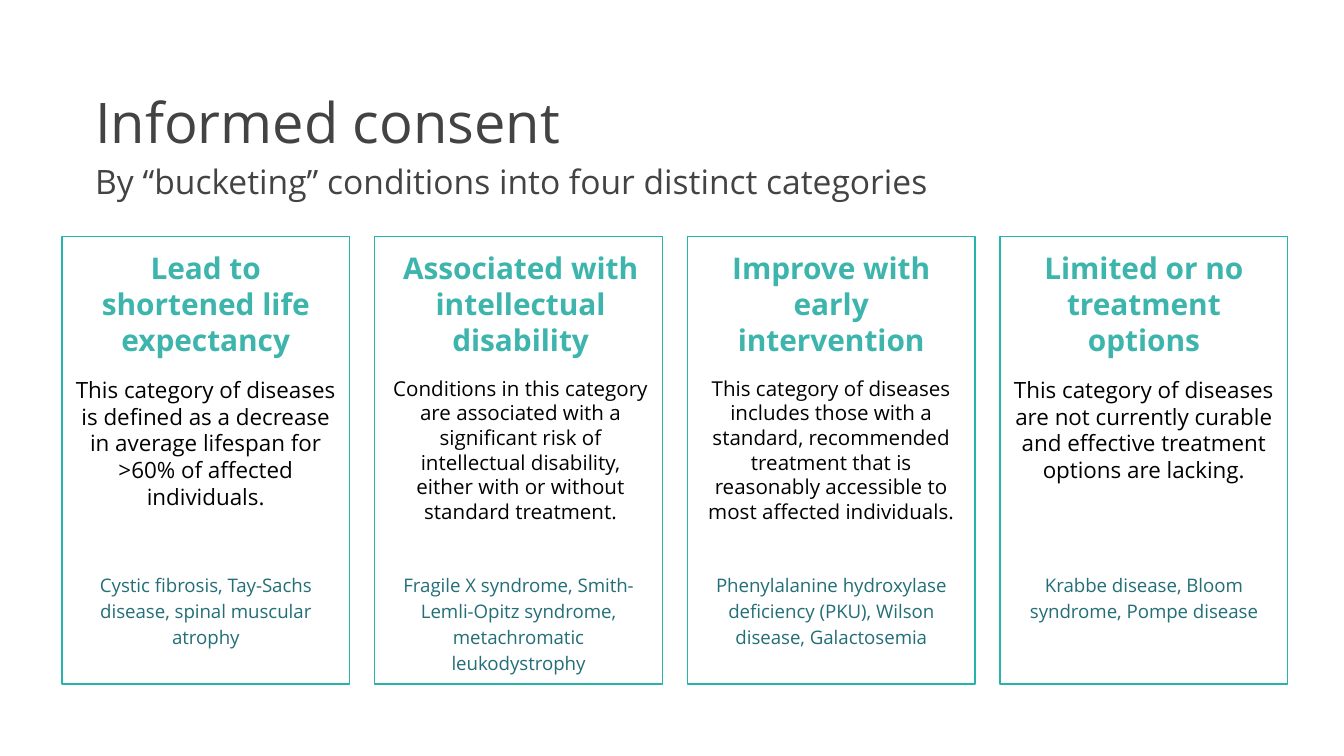
from pptx import Presentation
from pptx.dml.color import RGBColor
from pptx.enum.shapes import MSO_SHAPE
from pptx.enum.text import MSO_ANCHOR, MSO_AUTO_SIZE, PP_ALIGN
from pptx.util import Cm, Pt

COLORS = {"title": "434343", "border": "26B3AB", "heading": "3DB5AD",
          "body": "000000", "examples": "236E77"}
FONT = "Open Sans"
CARD_LEFT, CARD_TOP, CARD_WIDTH, CARD_HEIGHT, CARD_PITCH = 1.17, 4.47, 5.44, 8.46, 5.91
CARDS = [
    ("Lead to shortened life expectancy",
     "This category of diseases is defined as a decrease in average lifespan "
     "for >60% of affected individuals.", 12, 0,
     "Cystic fibrosis, Tay-Sachs disease, spinal muscular atrophy"),
    ("Associated with intellectual disability",
     "Conditions in this category are associated with a significant risk of "
     "intellectual disability, either with or without standard treatment.", 11, 0.08,
     "Fragile X syndrome, Smith-Lemli-Opitz syndrome, metachromatic leukodystrophy"),
    ("Improve with early intervention",
     "This category of diseases includes those with a standard, recommended "
     "treatment that is reasonably accessible to most affected individuals.", 11, 0,
     "Phenylalanine hydroxylase deficiency (PKU), Wilson disease, Galactosemia"),
    ("Limited or no treatment options",
     "This category of diseases are not currently curable and effective "
     "treatment options are lacking.", 12, 0,
     "Krabbe disease, Bloom syndrome, Pompe disease"),
]


def set_frame(tf, inset, anchor=MSO_ANCHOR.TOP):
    """Set wrapping, insets and anchor of a text frame."""
    tf.word_wrap = True
    tf.auto_size = MSO_AUTO_SIZE.NONE
    tf.vertical_anchor = anchor
    tf.margin_left = tf.margin_right = tf.margin_top = tf.margin_bottom = Cm(inset)


def add_text(p, text, size, color, bold=False, align=PP_ALIGN.CENTER, spacing=1.0, after=0):
    """Add a formatted run to a paragraph."""
    p.alignment = align
    p.line_spacing = spacing
    p.space_after = Pt(after)
    r = p.add_run()
    r.text = text
    r.font.name = FONT
    r.font.size = Pt(size)
    r.font.bold = bold
    r.font.color.rgb = RGBColor.from_string(COLORS[color])


def add_title(s, title, subtitle):
    """Fill the title placeholder with a title line and a subtitle line."""
    sp = s.shapes.title
    sp.left, sp.top, sp.width, sp.height = Cm(1.52), Cm(1.14), Cm(22.3), Cm(3)
    set_frame(sp.text_frame, 0.28, MSO_ANCHOR.MIDDLE)
    p = sp.text_frame.paragraphs[0]
    style = {"color": "title", "align": PP_ALIGN.LEFT, "spacing": 1.15, "after": 7}
    add_text(p, title, 30, **style)
    p.add_line_break()
    add_text(p, subtitle, 18, **style)


def add_box(s, left, top, width, height):
    """Add a text box and return its text frame."""
    tf = s.shapes.add_textbox(Cm(left), Cm(top), Cm(width), Cm(height)).text_frame
    set_frame(tf, 0.25)
    return tf


def add_card(s, left, heading, body, body_size, indent, examples):
    """Add an outlined card with heading, description and examples."""
    sp = s.shapes.add_shape(MSO_SHAPE.RECTANGLE, Cm(left), Cm(CARD_TOP),
                            Cm(CARD_WIDTH), Cm(CARD_HEIGHT))
    sp.shadow.inherit = False
    sp.fill.background()
    sp.line.color.rgb = RGBColor.from_string(COLORS["border"])
    sp.line.width = Pt(0.75)

    tf = add_box(s, left + indent, CARD_TOP, CARD_WIDTH - indent, 6.32)
    add_text(tf.paragraphs[0], heading, 16, "heading", bold=True, after=10)
    add_text(tf.add_paragraph(), body, body_size, "body", after=10)

    tf = add_box(s, left, 10.54, CARD_WIDTH, 2.26)
    add_text(tf.paragraphs[0], examples, 10, "examples", spacing=1.15)


def main():
    """Build the slide and save it."""
    prs = Presentation()
    prs.slide_width, prs.slide_height = Cm(25.4), Cm(14.29)
    s = prs.slides.add_slide(prs.slide_layouts[5])
    add_title(s, "Informed consent",
              "By “bucketing” conditions into four distinct categories")
    for i, card in enumerate(CARDS):
        add_card(s, CARD_LEFT + i * CARD_PITCH, *card)
    prs.save("out.pptx")


if __name__ == "__main__":
    main()
